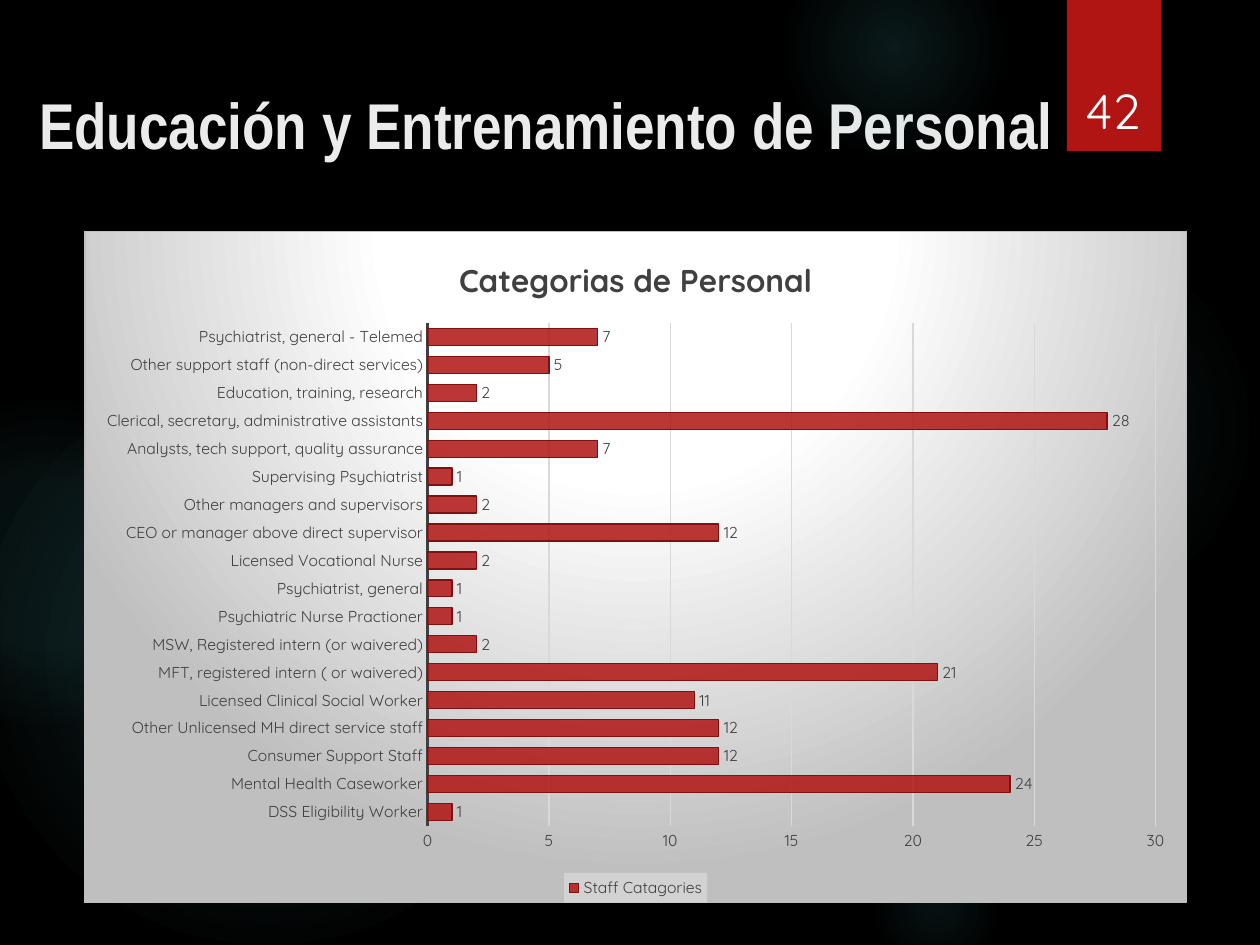
"""Build the staff education and training slide with its category bar chart."""
import pptx
import pptx.chart.data
import pptx.dml.color
import pptx.enum.chart
import pptx.enum.shapes
import pptx.enum.text
import pptx.oxml
import pptx.oxml.ns
import pptx.util
from pptx.util import Cm, Pt

COLORS = {
    "back": "000000", "glow": "50B9C1", "red": "B01513", "dark_red": "84100E",
    "title": "EBEBEB", "white": "FFFFFF", "text": "404040", "grid": "D9D9D9",
    "gray": "BFBFBF", "legend": "F2F2F2",
}
FONT = "Quicksand"
TITLE_FONT = "Arial Narrow"
GLOWS = [
    (17.5, 4.65, 7.82, [(0, 7), (36, 6), (69, 0)]),
    (15.8, -1.27, 4.45, [(0, 14), (36, 7), (73, 0)]),
    (17.5, 16.94, 2.74, [(0, 9), (36, 5), (66, 0)]),
    (-0.43, 7.42, 11.63, [(0, 11), (36, 10), (75, 0)]),
    (-2.34, 8.05, 6.55, [(0, 8), (36, 8), (72, 0)]),
]
STAFF = [
    ("DSS Eligibility Worker", 1),
    ("Mental Health Caseworker", 24),
    ("Consumer Support Staff", 12),
    ("Other Unlicensed MH direct service staff", 12),
    ("Licensed Clinical Social Worker", 11),
    ("MFT, registered intern ( or waivered)", 21),
    ("MSW, Registered intern (or waivered)", 2),
    ("Psychiatric Nurse Practioner", 1),
    ("Psychiatrist, general", 1),
    ("Licensed Vocational Nurse", 2),
    ("CEO or manager above direct supervisor", 12),
    ("Other managers and supervisors", 2),
    ("Supervising Psychiatrist", 1),
    ("Analysts, tech support, quality assurance", 7),
    ("Clerical, secretary, administrative assistants", 28),
    ("Education, training, research", 2),
    ("Other support staff (non-direct services)", 5),
    ("Psychiatrist, general - Telemed", 7),
]


def rgb(name):
    """Return the named colour."""
    return pptx.dml.color.RGBColor.from_string(COLORS[name])


def xml(text):
    """Parse an XML fragment that uses the a and c prefixes."""
    head, sep, rest = text.partition(">")
    if head.endswith("/"):
        head, sep = head[:-1], "/>"
    return pptx.oxml.parse_xml(f"{head} {pptx.oxml.ns.nsdecls('a', 'c')}{sep}{rest}")


def solid(fill, name):
    """Fill with one colour."""
    fill.solid()
    fill.fore_color.rgb = rgb(name)


def color_xml(name, alpha):
    """Return a colour element with an opacity in percent."""
    return f'<a:srgbClr val="{COLORS[name]}"><a:alpha val="{alpha * 1000}"/></a:srgbClr>'


def radial(stops, top=50, bottom=50):
    """Return a circular gradient fill as XML text."""
    gs = "".join(f'<a:gs pos="{pos * 1000}">{color_xml(name, alpha)}</a:gs>'
                 for pos, name, alpha in stops)
    return (f'<a:gradFill><a:gsLst>{gs}</a:gsLst><a:path path="circle"><a:fillToRect l="50000" '
            f't="{top * 1000}" r="50000" b="{bottom * 1000}"/></a:path></a:gradFill>')


def set_font(font, size, color, name=FONT, bold=False):
    """Format a font."""
    font.size, font.name, font.bold = Pt(size), name, bold
    font.color.rgb = rgb(color)


def add_run(tf, text, size, color, name=FONT, bold=False):
    """Put one centred run in a text frame."""
    p = tf.paragraphs[0]
    p.alignment = pptx.enum.text.PP_ALIGN.CENTER
    r = p.add_run()
    r.text = text
    set_font(r.font, size, color, name, bold)


def plain_shape(s, kind, left, top, width, height):
    """Add a preset shape without line or shadow."""
    sp = s.shapes.add_shape(kind, Cm(left), Cm(top), Cm(width), Cm(height))
    sp.shadow.inherit = False
    sp.line.fill.background()
    return sp


def add_glow(s, left, top, size, stops):
    """Add a soft round background light."""
    sp = plain_shape(s, pptx.enum.shapes.MSO_SHAPE.OVAL, left, top, size, size)
    geom = sp.element.spPr.find(pptx.oxml.ns.qn("a:prstGeom"))
    geom.addnext(xml(radial([(pos, "glow", alpha) for pos, alpha in stops])))


def add_badge(s, number):
    """Add the red tab with the slide number."""
    sp = plain_shape(s, pptx.enum.shapes.MSO_SHAPE.RECTANGLE, 21.51, 0, 1.9, 3.05)
    solid(sp.fill, "red")
    sp.element.spPr.find(pptx.oxml.ns.qn("a:effectLst")).append(xml(
        f'<a:outerShdw blurRad="{Pt(3)}" dist="{Pt(2)}" dir="5400000" rotWithShape="0">'
        f'{color_xml("back", 45)}</a:outerShdw>'))
    tf = s.shapes.add_textbox(Cm(21.56), Cm(0.81), Cm(1.75), Cm(2.13)).text_frame
    tf.word_wrap = True
    tf.vertical_anchor = pptx.enum.text.MSO_ANCHOR.BOTTOM
    add_run(tf, number, 28, "white")


def set_title(s, text):
    """Place and format the title placeholder."""
    sp = s.shapes.title
    sp.left, sp.top, sp.width, sp.height = Cm(0.43), Cm(1.47), Cm(21.16), Cm(2.06)
    tf = sp.text_frame
    tf.auto_size = pptx.enum.text.MSO_AUTO_SIZE.NONE
    tf.vertical_anchor = pptx.enum.text.MSO_ANCHOR.MIDDLE
    add_run(tf, text, 37, "title", TITLE_FONT, True)


def format_axes(chart):
    """Format both axes and the gridlines."""
    cat, val = chart.category_axis, chart.value_axis
    for axis in (cat, val):
        axis.major_tick_mark = axis.minor_tick_mark = pptx.enum.chart.XL_TICK_MARK.NONE
        set_font(axis.tick_labels.font, 9, "text")
    cat.has_major_gridlines = False
    cat.format.line.color.rgb = rgb("text")
    cat.format.line.width = Pt(1.5)
    val.minimum_scale, val.maximum_scale, val.major_unit = 0, 30, 5
    val.format.line.fill.background()
    grid = val.major_gridlines.format.line
    grid.color.rgb, grid.width = rgb("grid"), Pt(0.75)


def format_bars(plot):
    """Format the bars and their value labels."""
    plot.gap_width = 65
    plot.vary_by_categories = False
    ser = plot.series[0]
    ser.invert_if_negative = False
    solid(ser.format.fill, "red")
    clr = ser.format.fill._xPr.find(".//" + pptx.oxml.ns.qn("a:srgbClr"))
    clr.append(xml('<a:alpha val="85000"/>'))
    ser.format.line.color.rgb = rgb("dark_red")
    ser.format.line.width = Pt(0.75)
    labels = ser.data_labels
    labels.show_value = True
    labels.position = pptx.enum.chart.XL_LABEL_POSITION.OUTSIDE_END
    set_font(labels.font, 9, "text")


def format_legend(chart):
    """Put the legend on a pale band at the bottom."""
    chart.has_legend = True
    chart.legend.position = pptx.enum.chart.XL_LEGEND_POSITION.BOTTOM
    chart.legend.include_in_layout = False
    set_font(chart.legend.font, 9, "text")
    overlay = chart._chartSpace.find(".//" + pptx.oxml.ns.qn("c:legend") + "/" + pptx.oxml.ns.qn("c:overlay"))
    overlay.addnext(xml(f'<c:spPr><a:solidFill>{color_xml("legend", 39)}</a:solidFill></c:spPr>'))


def add_staff_chart(s):
    """Add the bar chart of staff categories."""
    data = pptx.chart.data.CategoryChartData()
    data.categories = [name for name, count in STAFF]
    data.add_series("Staff Catagories", [count for name, count in STAFF])
    chart = s.shapes.add_chart(pptx.enum.chart.XL_CHART_TYPE.BAR_CLUSTERED,
                               Cm(1.7), Cm(4.65), Cm(22.23), Cm(13.56), data).chart
    set_font(chart.font, 10, "white")
    chart.has_title = True
    add_run(chart.chart_title.text_frame, "Categorias de Personal", 18, "text", bold=True)
    chart.chart_title.include_in_layout = False
    format_axes(chart)
    format_bars(chart.plots[0])
    format_legend(chart)
    fill = radial([(0, "white", 100), (39, "white", 100), (100, "gray", 100)], -80, 180)
    chart._chartSpace.find(pptx.oxml.ns.qn("c:chart")).addnext(xml(
        f'<c:spPr>{fill}<a:ln w="{Pt(0.75)}"><a:solidFill>{color_xml("gray", 100)}'
        '</a:solidFill></a:ln></c:spPr>'))


def main():
    """Build and save the slide."""
    prs = pptx.Presentation()
    prs.slide_width, prs.slide_height = Cm(25.4), Cm(19.05)
    s = prs.slides.add_slide(prs.slide_layouts[5])
    solid(s.background.fill, "back")
    for glow in GLOWS:
        add_glow(s, *glow)
    add_badge(s, "42")
    set_title(s, "Educación y Entrenamiento de Personal")
    add_staff_chart(s)
    prs.save("out.pptx")


if __name__ == "__main__":
    main()
